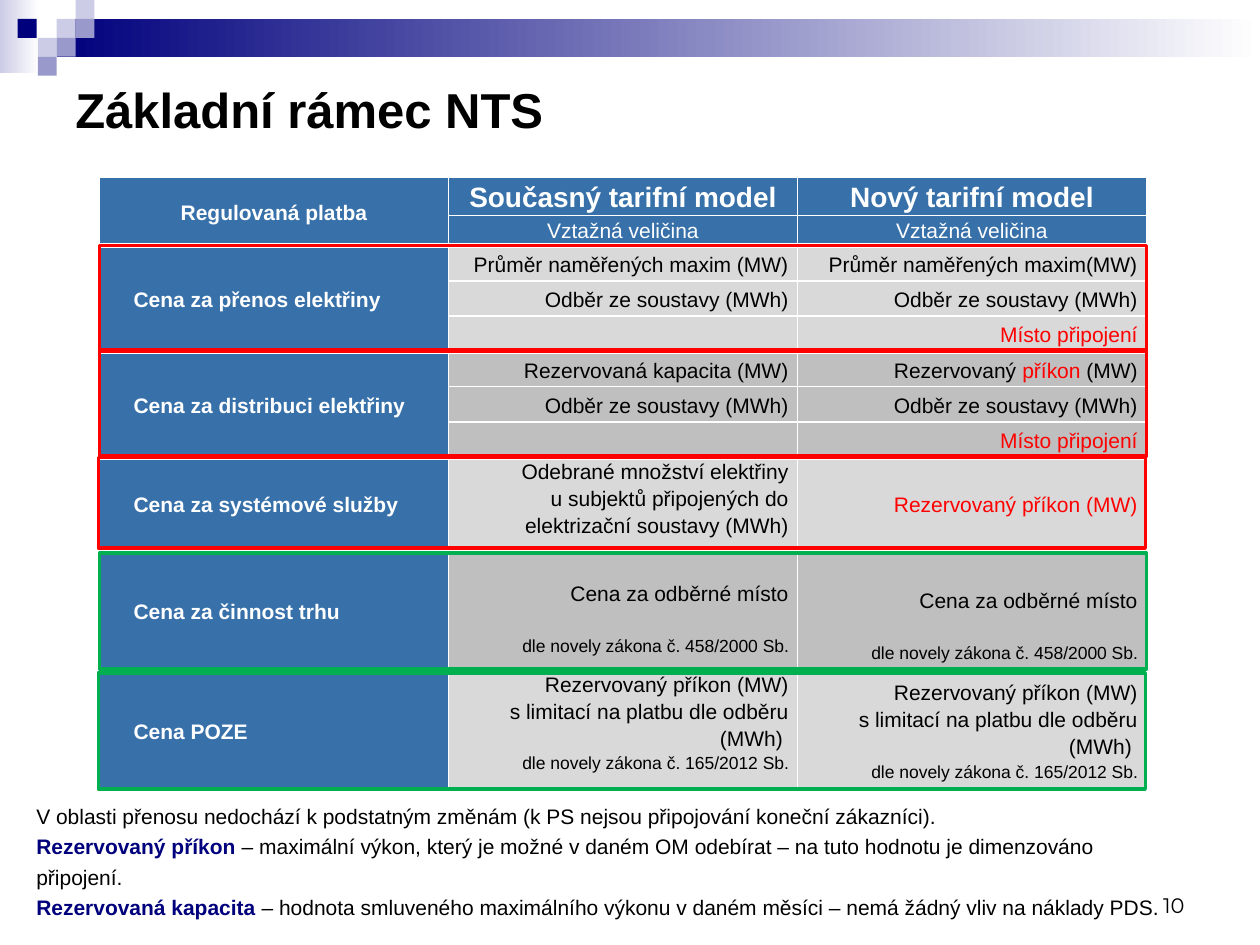
from dataclasses import dataclass

from lxml import etree
from pptx import Presentation
from pptx.dml.color import RGBColor
from pptx.enum.shapes import MSO_SHAPE
from pptx.enum.text import MSO_ANCHOR, PP_ALIGN
from pptx.oxml.ns import qn
from pptx.util import Inches, Pt

RECTANGLE = MSO_SHAPE.RECTANGLE
LEFT, CENTER, RIGHT = PP_ALIGN.LEFT, PP_ALIGN.CENTER, PP_ALIGN.RIGHT
TOP, MIDDLE, BOTTOM = MSO_ANCHOR.TOP, MSO_ANCHOR.MIDDLE, MSO_ANCHOR.BOTTOM


@dataclass(frozen=True)
class Theme:
    font: str = "Arial"
    number_font: str = "Montserrat"
    black: str = "000000"
    white: str = "FFFFFF"
    navy: str = "00007D"
    lavender: str = "CCCCE6"
    violet: str = "9999CC"
    blue: str = "3871AA"
    light_gray: str = "D9D9D9"
    dark_gray: str = "BFBFBF"
    red: str = "FF0000"
    green: str = "00B050"
    title_size: int = 28
    heading_size: int = 16
    body_size: int = 12
    small_size: int = 10


THEME = Theme()


@dataclass
class Text:
    """One run of text and its look."""
    text: str
    color: str = THEME.black
    size: int = THEME.body_size
    bold: bool = False
    font: str = THEME.font


@dataclass
class Line:
    """One paragraph of runs."""
    runs: list
    space_before: int = 0


def line(text, space_before=0, **style):
    return Line([Text(text, **style)], space_before)


class SlideBuilder:
    def __init__(self, presentation):
        self.slide = presentation.slides.add_slide(presentation.slide_layouts[6])

    def add_lines(self, frame, lines, align=LEFT, spacing=1.0, indent=0):
        for index, content in enumerate(lines):
            paragraph = frame.paragraphs[0] if index == 0 else frame.add_paragraph()
            paragraph.alignment = align
            paragraph.line_spacing = spacing
            paragraph.space_before = Pt(content.space_before)
            if indent:
                paragraph._p.get_or_add_pPr().set("marL", str(Inches(indent)))
            for item in content.runs:
                for part_index, part in enumerate(item.text.split("\n")):
                    if part_index:
                        paragraph.add_line_break()
                    run = paragraph.add_run()
                    run.text = part
                    run.font.name = item.font
                    run.font.size = Pt(item.size)
                    run.font.bold = item.bold
                    run.font.color.rgb = RGBColor.from_string(item.color)

    def text_box(self, left, top, width, height, lines, anchor=TOP, **layout):
        box = self.slide.shapes.add_textbox(
            Inches(left), Inches(top), Inches(width), Inches(height))
        box.text_frame.word_wrap = True
        box.text_frame.vertical_anchor = anchor
        self.add_lines(box.text_frame, lines, **layout)

    def rectangle(self, left, top, width, height, colors=(), outline=None):
        """One colour gives a solid fill, two a gradient from left to right."""
        shape = self.slide.shapes.add_shape(
            RECTANGLE, Inches(left), Inches(top), Inches(width), Inches(height))
        shape.shadow.inherit = False
        if len(colors) == 2:
            shape.fill.gradient()
            shape.fill.gradient_angle = 0
            for stop, color, position in zip(shape.fill.gradient_stops, colors, (0, 1)):
                stop.color.rgb = RGBColor.from_string(color)
                stop.position = position
        elif colors:
            shape.fill.solid()
            shape.fill.fore_color.rgb = RGBColor.from_string(colors[0])
        else:
            shape.fill.background()
        if outline:
            shape.line.color.rgb = RGBColor.from_string(outline)
            shape.line.width = Pt(2)
        else:
            shape.line.fill.background()

    def table(self, left, top, column_widths, row_heights):
        table = self.slide.shapes.add_table(
            len(row_heights), len(column_widths), Inches(left), Inches(top),
            Inches(sum(column_widths)), Inches(sum(row_heights))).table
        table.first_row = table.horz_banding = False
        for column, width in zip(table.columns, column_widths):
            column.width = Inches(width)
        for row, height in zip(table.rows, row_heights):
            row.height = Inches(height)
        return table

    def cell(self, cell, lines, fill, anchor=MIDDLE, margin_top=0, borders=(1, 1), **layout):
        """borders holds the widths of the top and bottom edges in points."""
        cell.margin_left = cell.margin_right = Inches(0.07)
        cell.margin_top, cell.margin_bottom = Inches(margin_top), 0
        cell.vertical_anchor = anchor
        if lines:
            self.add_lines(cell.text_frame, lines, spacing=1.15, **layout)
        else:
            etree.SubElement(cell.text_frame.paragraphs[0]._p, qn("a:endParaRPr"),
                             sz=str(THEME.body_size * 100))
        properties = cell._tc.get_or_add_tcPr()
        for edge, width in zip(("lnL", "lnR", "lnT", "lnB"), (1, 1, *borders)):
            border = etree.SubElement(properties, qn(f"a:{edge}"), w=str(Pt(width)))
            solid = etree.SubElement(border, qn("a:solidFill"))
            etree.SubElement(solid, qn("a:srgbClr"), val=THEME.white)
        cell.fill.solid()
        cell.fill.fore_color.rgb = RGBColor.from_string(fill)


def add_banner(builder):
    builder.rectangle(0, 0, 0.31, 0.58, (THEME.lavender, THEME.white))
    builder.rectangle(0.45, 0.15, 9.55, 0.3, (THEME.navy, THEME.white))
    squares = [(0.45, 0.15, THEME.lavender), (0.6, 0, THEME.lavender),
               (0.6, 0.15, THEME.violet), (0.3, 0.3, THEME.lavender),
               (0.14, 0.15, THEME.navy), (0.45, 0.3, THEME.violet),
               (0.3, 0.45, THEME.violet)]
    for left, top, color in squares:
        builder.rectangle(left, top, 0.15, 0.15, (color,))


def add_tariff_table(builder):
    line_height = 16
    consumption = [line("Odběr ze soustavy (MWh)")]
    connection = [line("Místo připojení", color=THEME.red)]
    market_fee = [line("Cena za odběrné místo"),
                  line("dle novely zákona č. 458/2000 Sb.", line_height, size=THEME.small_size)]
    renewables_fee = [line("Rezervovaný příkon (MW)"),
                      line("s limitací na platbu dle odběru (MWh) "),
                      line("dle novely zákona č. 165/2012 Sb.", size=THEME.small_size)]
    reserved_power = [Line([Text("Rezervovaný "), Text("příkon ", THEME.red), Text("(MW)")])]
    service_volume = [line("Odebrané množství elektřiny\n"
                           "u subjektů připojených do elektrizační soustavy (MWh)")]
    groups = [
        ("Cena za přenos elektřiny", [
            ([line("Průměr naměřených maxim (MW)")], [line("Průměr naměřených maxim(MW)")]),
            (consumption, consumption), ([], connection)]),
        ("Cena za distribuci elektřiny", [
            ([line("Rezervovaná kapacita (MW)")], reserved_power),
            (consumption, consumption), ([], connection)]),
        ("Cena za systémové služby", [
            (service_volume, [line("Rezervovaný příkon (MW)", color=THEME.red)])]),
        ("Cena za činnost trhu", [(market_fee, market_fee)]),
        ("Cena POZE", [(renewables_fee, renewables_fee)]),
    ]
    table = builder.table(0.79, 1.41, [2.77] * 3, [0.3, 0.24] + [0.28] * 6 + [0.74, 0.95, 0.95])

    def label(row, row_count, text, borders, **layout):
        for offset in range(row_count):
            lines = [] if offset else [line(text, color=THEME.white, bold=True)]
            builder.cell(table.cell(row + offset, 0), lines, THEME.blue,
                         borders=borders, **layout)
        if row_count > 1:
            table.cell(row, 0).merge(table.cell(row + row_count - 1, 0))

    label(0, 2, "Regulovaná platba", (1, 3), align=CENTER)
    for column, heading in enumerate(("Současný tarifní model", "Nový tarifní model"), 1):
        builder.cell(table.cell(0, column),
                     [line(heading, color=THEME.white, size=THEME.heading_size, bold=True)],
                     THEME.blue, TOP, align=CENTER)
        builder.cell(table.cell(1, column), [line("Vztažná veličina", color=THEME.white)],
                     THEME.blue, TOP, borders=(1, 3), align=CENTER)

    row = 2
    for group_index, (name, group_rows) in enumerate(groups):
        fill = THEME.dark_gray if group_index % 2 else THEME.light_gray
        last_edge = 1 if group_index == len(groups) - 1 else 3
        label(row, len(group_rows), name, (3, last_edge), indent=0.2)
        for offset, values in enumerate(group_rows):
            borders = (1 if offset else 3, last_edge if offset == len(group_rows) - 1 else 1)
            for column, lines in enumerate(values, 1):
                anchor = TOP if column == 1 and len(group_rows) == 1 else MIDDLE
                margin_top = line_height / 72 if lines is market_fee else 0
                builder.cell(table.cell(row, column), lines, fill, anchor, margin_top,
                             borders, align=RIGHT)
            row += 1


def add_notes_text(builder):
    def definition(term, meaning):
        return Line([Text(term, THEME.navy, bold=True), Text(meaning)])

    builder.text_box(0.19, 6.29, 9.27, 1.07, [
        line("V oblasti přenosu nedochází k podstatným změnám "
             "(k PS nejsou připojování koneční zákazníci)."),
        definition("Rezervovaný příkon ", "– maximální výkon, který je možné v daném OM "
                   "odebírat – na tuto hodnotu je dimenzováno připojení."),
        definition("Rezervovaná kapacita ", "– hodnota smluveného maximálního výkonu "
                   "v daném měsíci – nemá žádný vliv na náklady PDS."),
    ], spacing=1.2)


def main():
    presentation = Presentation()
    presentation.slide_width, presentation.slide_height = Inches(10), Inches(7.5)
    builder = SlideBuilder(presentation)
    add_banner(builder)
    add_tariff_table(builder)
    builder.text_box(0.5, 0.5, 7.57, 0.73,
                     [line("Základní rámec NTS", size=THEME.title_size, bold=True)], MIDDLE)
    builder.text_box(7.17, 6.83, 2.33, 0.5, [line("10", font=THEME.number_font)],
                     BOTTOM, align=RIGHT)
    add_notes_text(builder)
    frames = [(0.79, 1.95, 0.83, THEME.red), (0.79, 2.79, 0.83, THEME.red),
              (0.78, 3.63, 0.72, THEME.red), (0.79, 4.39, 0.92, THEME.green),
              (0.78, 5.34, 0.92, THEME.green)]
    for left, top, height, color in frames:
        builder.rectangle(left, top, 8.31, height, outline=color)
    presentation.save("out.pptx")


if __name__ == "__main__":
    main()
